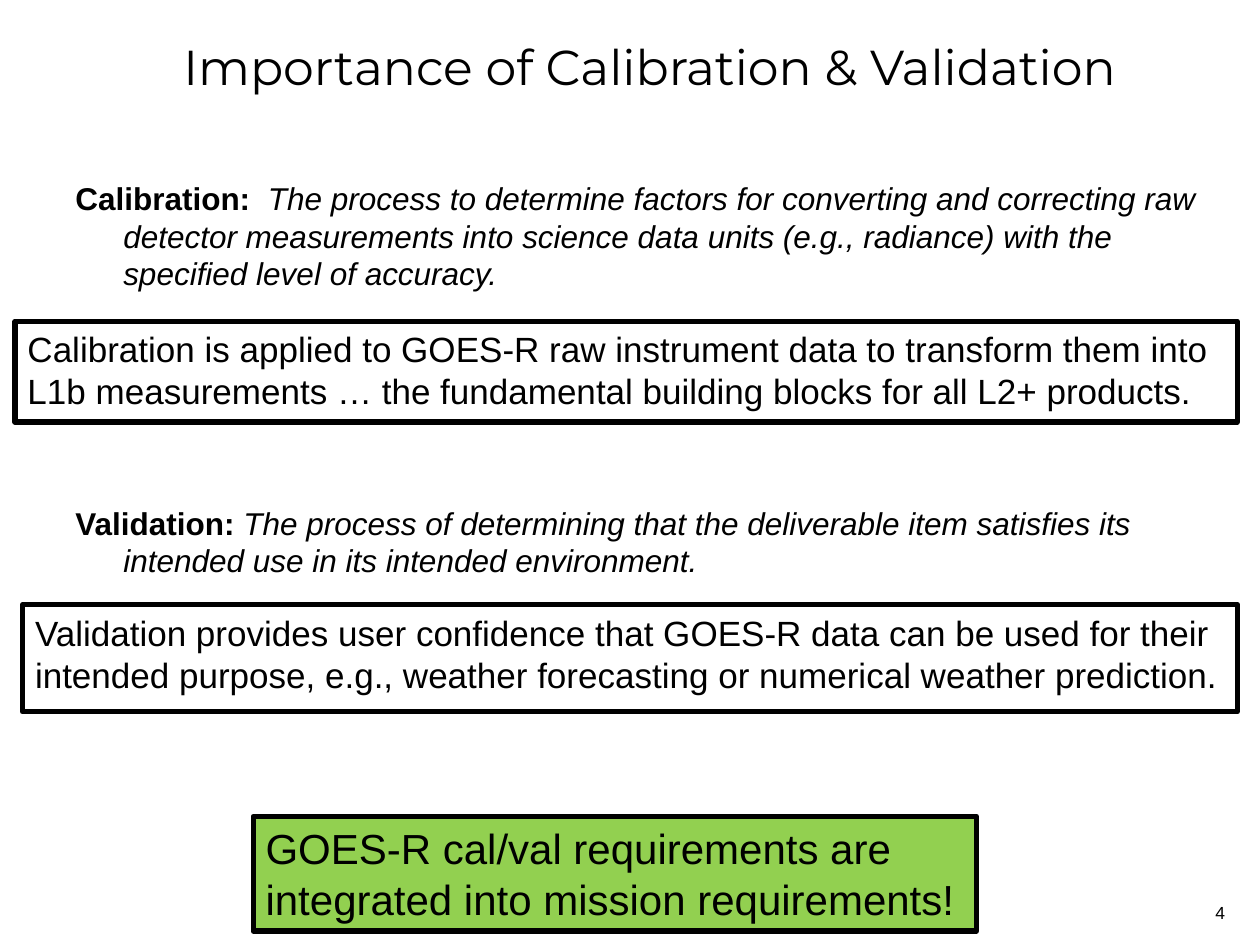
from pptx import Presentation
from pptx.dml.color import RGBColor
from pptx.enum.shapes import MSO_SHAPE as Shape
from pptx.enum.text import MSO_ANCHOR as Anchor, PP_ALIGN as Align
from pptx.util import Inches, Pt

COLORS = {"ink": "000000", "paper": "FFFFFF", "highlight": "92D050"}
WIDTH, HEIGHT = 10, 7.5
RIGHT = 9.82  # shared right edge of the content
INDENT = 0.38


def color(name):
    return RGBColor.from_string(COLORS[name])


def place(left, top, width, height):
    return [Inches(value) for value in (left, top, width, height)]


def format_run(run, size, font="Arial", bold=False, italic=False):
    run.font.name = font
    run.font.size = Pt(size)
    run.font.bold = bold
    run.font.italic = italic
    run.font.color.rgb = color("ink")


def add_label(slide, box, text, size, align, font="Arial", anchor=Anchor.TOP):
    frame = slide.shapes.add_textbox(*place(*box)).text_frame
    frame.word_wrap = True
    frame.vertical_anchor = anchor
    frame.text = text
    paragraph = frame.paragraphs[0]
    paragraph.alignment = align
    format_run(paragraph.runs[0], size, font)


def add_definition(slide, top, height, term, meaning, spacing=None):
    """Bold term and italic meaning with a hanging indent."""
    left = WIDTH * 0.05
    frame = slide.shapes.add_textbox(*place(left, top, RIGHT - left, height)).text_frame
    frame.word_wrap = True
    paragraph = frame.paragraphs[0]
    properties = paragraph._p.get_or_add_pPr()
    properties.set("marL", str(Inches(INDENT)))
    properties.set("indent", str(-Inches(INDENT)))
    paragraph.line_spacing = spacing
    for text, is_term in ((term, True), (meaning, False)):
        run = paragraph.add_run()
        run.text = text
        format_run(run, 18, bold=is_term, italic=not is_term)


def add_framed_box(slide, box, text, size, fill=None):
    """Outlined rectangle holding a key statement."""
    shape = slide.shapes.add_shape(Shape.RECTANGLE, *place(*box))
    shape.shadow.inherit = False
    shape.line.color.rgb = color("ink")
    shape.line.width = Pt(3)
    if fill:
        shape.fill.solid()
        shape.fill.fore_color.rgb = color(fill)
    else:
        shape.fill.background()
    frame = shape.text_frame
    frame.word_wrap = True
    frame.vertical_anchor = Anchor.TOP
    frame.text = text
    paragraph = frame.paragraphs[0]
    paragraph.alignment = Align.LEFT
    format_run(paragraph.runs[0], size)


def main():
    presentation = Presentation()
    presentation.slide_width, presentation.slide_height = Inches(WIDTH), Inches(HEIGHT)
    slide = presentation.slides.add_slide(presentation.slide_layouts[6])
    slide.background.fill.solid()
    slide.background.fill.fore_color.rgb = color("paper")

    # Title
    add_label(slide, (1.35, 0.11, 7.61, 0.82), "Importance of Calibration & Validation",
              28, Align.CENTER, "Montserrat", Anchor.MIDDLE)

    # Calibration
    add_definition(slide, 1.37, 1.09, "Calibration:  ",
                   "The process to determine factors for converting and correcting raw "
                   "detector measurements into science data units (e.g., radiance) with "
                   "the specified level of accuracy.")
    add_framed_box(slide, (0.12, 2.55, RIGHT - 0.12, 0.8),
                   "Calibration is applied to GOES-R raw instrument data to transform them into "
                   "L1b measurements … the fundamental building blocks for all L2+ products.", 20)

    # Validation
    add_definition(slide, 3.96, 0.74, "Validation: ",
                   "The process of determining that the deliverable item satisfies its "
                   "intended use in its intended environment.", Pt(21))
    add_framed_box(slide, (0.18, 4.8, RIGHT - 0.18, 0.85),
                   "Validation provides user confidence that GOES-R data can be used for their "
                   "intended purpose, e.g., weather forecasting or numerical weather prediction.", 20)

    # Conclusion
    add_framed_box(slide, (2.01, 6.48, 5.74, 0.91),
                   "GOES-R cal/val requirements are integrated into mission requirements!",
                   24, "highlight")

    # Slide number
    add_label(slide, (RIGHT - 2.33, 7.11, 2.33, 0.39), "4", 10, Align.RIGHT)

    presentation.save("out.pptx")


if __name__ == "__main__":
    main()
